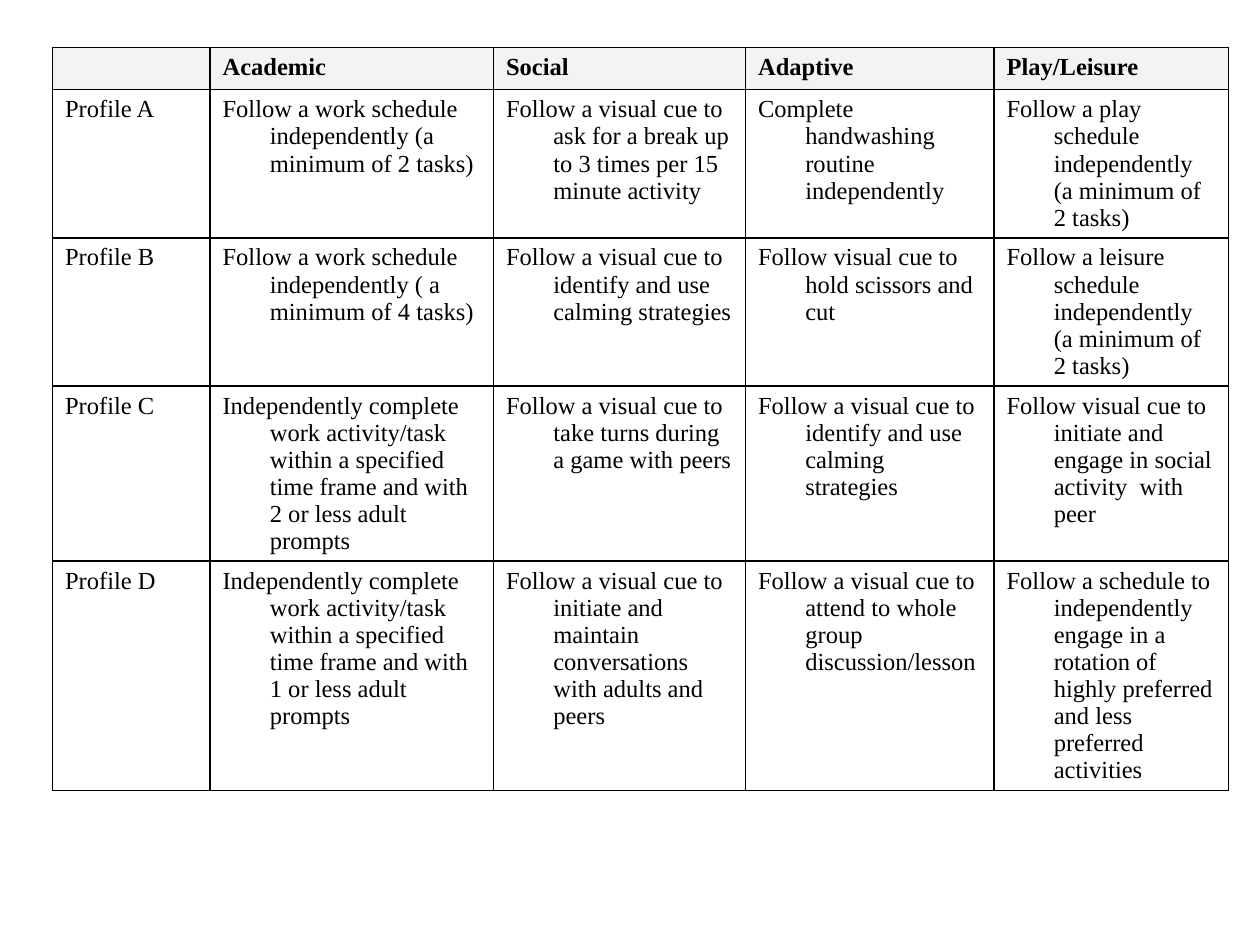
from lxml import etree
from pptx import Presentation
from pptx.dml.color import RGBColor
from pptx.oxml.ns import qn
from pptx.util import Pt

BLACK = RGBColor(0x00, 0x00, 0x00)
HEADER_GRAY = RGBColor(0xF3, 0xF3, 0xF3)

COL_WIDTHS = [90, 162, 144, 142, 134]
ROW_HEIGHT = 21.6
GOALS = [
    ["", "Academic", "Social", "Adaptive", "Play/Leisure"],
    ["Profile A",
     "Follow a work schedule independently (a minimum of 2 tasks)",
     "Follow a visual cue to ask for a break up to 3 times per 15 minute activity",
     "Complete handwashing routine independently",
     "Follow a play schedule independently (a minimum of 2 tasks)"],
    ["Profile B",
     "Follow a work schedule independently ( a minimum of 4 tasks)",
     "Follow a visual cue to identify and use calming strategies",
     "Follow visual cue to hold scissors and cut",
     "Follow a leisure schedule independently (a minimum of 2 tasks)"],
    ["Profile C",
     "Independently complete work activity/task within a specified time frame "
     "and with 2 or less adult prompts",
     "Follow a visual cue to take turns during a game with peers",
     "Follow a visual cue to identify and use calming strategies",
     "Follow visual cue to initiate and engage in social activity  with peer"],
    ["Profile D",
     "Independently complete work activity/task within a specified time frame "
     "and with 1 or less adult prompts",
     "Follow a visual cue to initiate and maintain conversations with adults and peers",
     "Follow a visual cue to attend to whole group discussion/lesson",
     "Follow a schedule to independently engage in a rotation of highly preferred "
     "and less preferred activities"],
]


def write(tf, text, font="Times New Roman", size=14, color=BLACK, bold=False, hanging=27):
    """Fill a text frame with one paragraph that has a hanging indent."""
    p = tf.paragraphs[0]
    pPr = p._p.get_or_add_pPr()
    pPr.set("marL", str(Pt(hanging)))
    pPr.set("indent", str(-Pt(hanging)))
    if not text:
        # An empty cell takes its line height from the end-of-paragraph size.
        etree.SubElement(p._p, qn("a:endParaRPr"), sz=str(size * 100))
        return
    r = p.add_run()
    r.text = text
    r.font.name = font
    r.font.size = Pt(size)
    r.font.bold = bold
    r.font.color.rgb = color


class SlideBuilder:
    def __init__(self, s, line_color=BLACK, line_width=1):
        self.s = s
        self.line_color = line_color
        self.line_width = line_width

    def border(self, cell):
        tcPr = cell._tc.get_or_add_tcPr()
        for side in ("L", "R", "T", "B"):
            ln = etree.SubElement(tcPr, qn(f"a:ln{side}"), w=str(Pt(self.line_width)))
            fill = etree.SubElement(ln, qn("a:solidFill"))
            etree.SubElement(fill, qn("a:srgbClr"), val=str(self.line_color))

    def table(self, left, top, rows, col_widths, row_height, header_fill):
        frame = self.s.shapes.add_table(
            len(rows), len(col_widths), Pt(left), Pt(top),
            Pt(sum(col_widths)), Pt(row_height * len(rows)))
        tbl = frame.table
        tbl.first_row = tbl.horz_banding = False
        for col, width in zip(tbl.columns, col_widths):
            col.width = Pt(width)
        for i, row in enumerate(rows):
            is_header = i == 0
            for j, text in enumerate(row):
                cell = tbl.cell(i, j)
                self.border(cell)
                if is_header:
                    cell.fill.solid()
                    cell.fill.fore_color.rgb = header_fill
                else:
                    cell.fill.background()
                write(cell.text_frame, text, bold=is_header)


def main():
    prs = Presentation()
    prs.slide_width, prs.slide_height = Pt(720), Pt(540)
    builder = SlideBuilder(prs.slides.add_slide(prs.slide_layouts[6]))
    builder.table(30, 27, GOALS, COL_WIDTHS, ROW_HEIGHT, HEADER_GRAY)
    prs.save("out.pptx")


if __name__ == "__main__":
    main()
